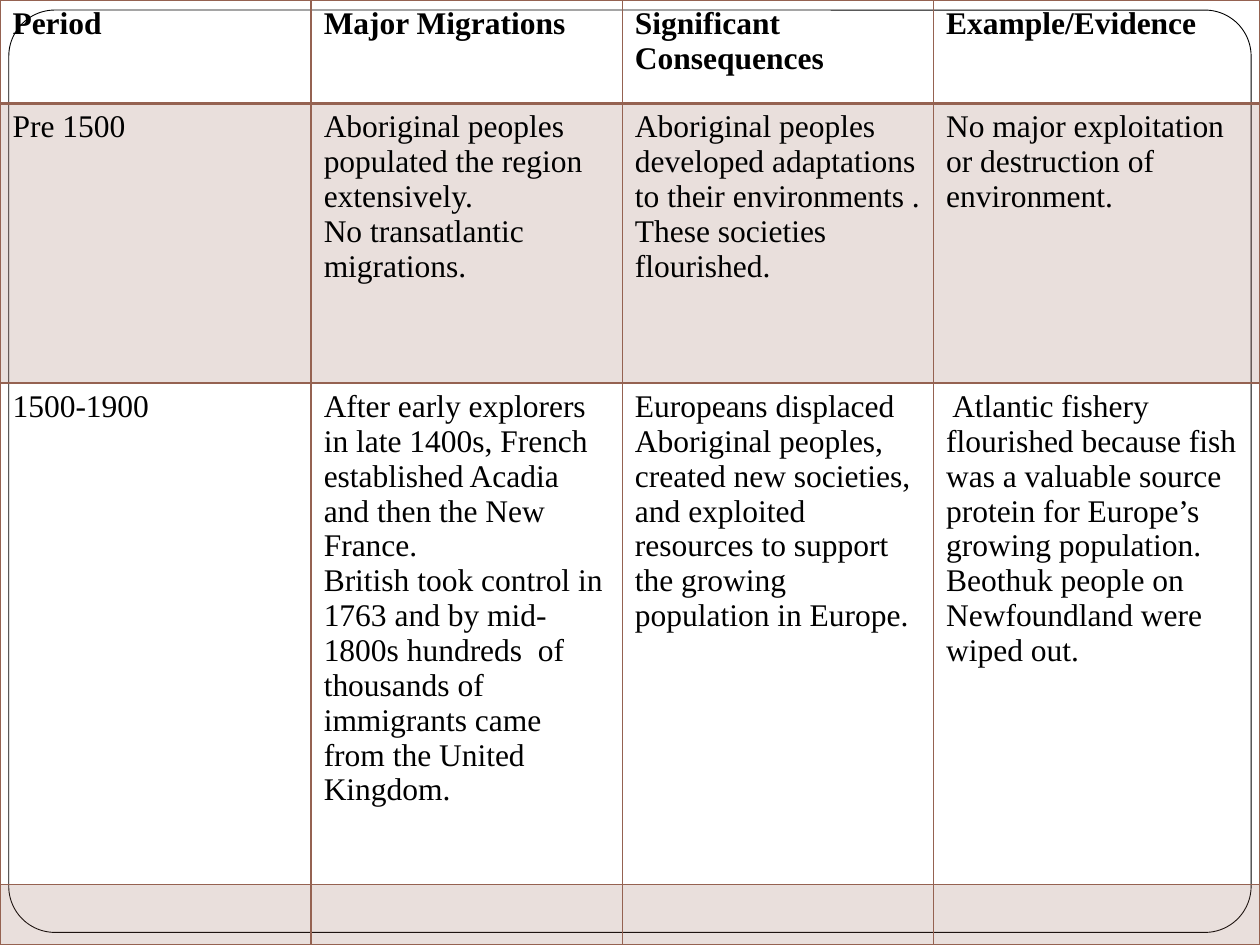
"""Build a slide with a table of migrations by period."""
from lxml import etree
from pptx import Presentation
from pptx.dml.color import RGBColor
from pptx.enum.shapes import MSO_SHAPE
from pptx.oxml.ns import qn
from pptx.util import Inches, Pt

ROUND = MSO_SHAPE.ROUNDED_RECTANGLE
BROWN = "956251"
FONT = "Times New Roman"
WIDTHS = [2.47, 2.47, 2.47, 2.59]
HEIGHTS = [0.82, 2.22, 3.98, 0.48]
ROWS = [
    ["Period", "Major Migrations", "Significant Consequences", "Example/Evidence"],
    ["Pre 1500",
     "Aboriginal peoples populated the region extensively.\n"
     "No transatlantic migrations.",
     "Aboriginal peoples developed adaptations to their environments . "
     "These societies flourished.",
     "No major exploitation or destruction of environment."],
    ["1500-1900",
     "After early explorers in late 1400s, French established Acadia "
     "and then the New France.\n"
     "British took control in 1763 and by mid- 1800s hundreds  of thousands "
     "of immigrants came from the United Kingdom.",
     "Europeans displaced Aboriginal peoples, created new societies, "
     "and exploited resources to support the growing population in Europe.",
     " Atlantic fishery flourished because fish was a valuable source protein "
     "for Europe’s growing population. Beothuk people on Newfoundland "
     "were wiped out."],
    ["", "", "", ""],
]


def color(text):
    return RGBColor.from_string(text)


def border(cell, side, width):
    line = etree.SubElement(cell._tc.get_or_add_tcPr(), qn("a:ln" + side), w=str(Pt(width)))
    fill = etree.SubElement(line, qn("a:solidFill"))
    etree.SubElement(fill, qn("a:srgbClr"), val=BROWN)


deck = Presentation()
deck.slide_width, deck.slide_height = Inches(10), Inches(7.5)
slide = deck.slides.add_slide(deck.slide_layouts[6])

frame = slide.shapes.add_shape(ROUND, Inches(0.07), Inches(0.08), Inches(9.86), Inches(7.32))
frame.adjustments[0] = 0.05
frame.shadow.inherit = False
frame.fill.solid()
frame.fill.fore_color.rgb = color("FFFFFF")
frame.line.color.rgb = color("000000")
frame.line.width = Pt(0.5)

table = slide.shapes.add_table(len(ROWS), len(WIDTHS), 0, 0, Inches(10), Inches(7.5)).table
table.horz_banding = False
table.first_row = False
for col, width in zip(table.columns, WIDTHS):
    col.width = Inches(width)
for row, height in zip(table.rows, HEIGHTS):
    row.height = Inches(height)

for r, texts in enumerate(ROWS):
    for c, text in enumerate(texts):
        cell = table.cell(r, c)
        cell.text = text
        for para in cell.text_frame.paragraphs:
            para.font.name = FONT
            para.font.size = Pt(18)
            para.font.bold = r == 0
            para.font.color.rgb = color("000000")
        for side in "LRTB":
            border(cell, side, 2 if (r, side) in [(0, "B"), (1, "T")] else 1)
        if r % 2:
            cell.fill.solid()
            cell.fill.fore_color.rgb = color(BROWN)
            tint = cell._tc.tcPr.find(qn("a:solidFill")).find(qn("a:srgbClr"))
            etree.SubElement(tint, qn("a:alpha"), val="20000")
        else:
            cell.fill.background()

deck.save("out.pptx")
